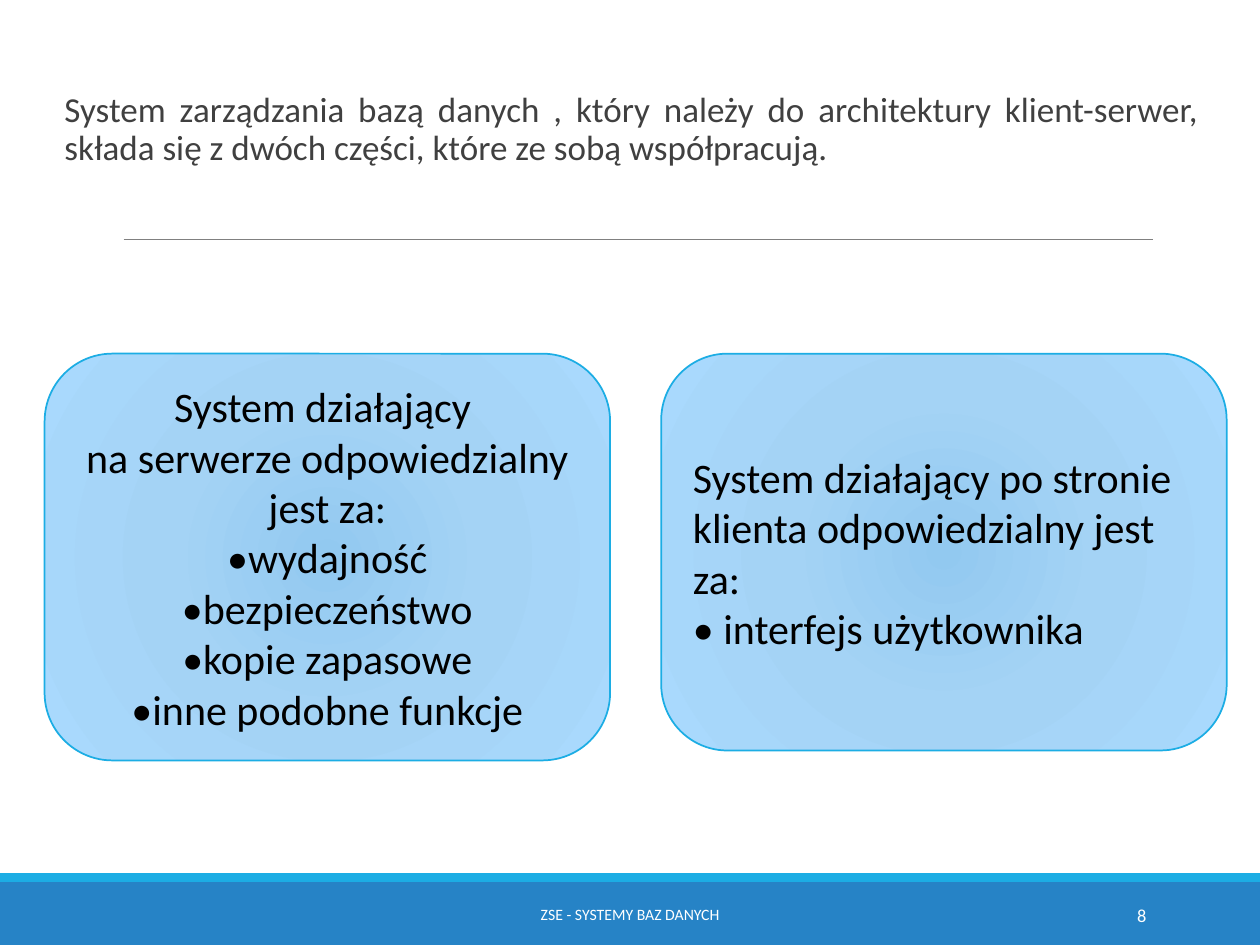
import dataclasses

import lxml.etree
import pptx
import pptx.dml.color
import pptx.enum.shapes
import pptx.enum.text
import pptx.oxml
import pptx.oxml.ns
import pptx.util

Cm = pptx.util.Cm
Pt = pptx.util.Pt
Align = pptx.enum.text.PP_ALIGN
Anchor = pptx.enum.text.MSO_ANCHOR
Kind = pptx.enum.shapes.MSO_SHAPE


@dataclasses.dataclass(frozen=True)
class Theme:
    font: str = "Calibri"
    band: str = "2683C6"
    edge: str = "1CADE4"
    rule: str = "808080"
    body: str = "404040"
    dark: str = "000000"
    light: str = "FFFFFF"
    glow: tuple = ((0, "92C9F0"), (45, "A4D3F5"), (100, "A9D9FD"))
    lead_size: float = 20
    card_size: float = 24
    foot_size: float = 9
    page_size: float = 10.5


THEME = Theme()


def tint(code):
    return pptx.dml.color.RGBColor.from_string(code)


def write(frame, lines, size, color, align, anchor=Anchor.MIDDLE):
    """Fill a text frame with one paragraph per line."""
    frame.word_wrap = True
    frame.vertical_anchor = anchor
    for i, line in enumerate(lines):
        para = frame.paragraphs[0] if i == 0 else frame.add_paragraph()
        para.alignment = align
        run = para.add_run()
        run.text = line
        run.font.name = THEME.font
        run.font.size = Pt(size)
        run.font.color.rgb = tint(color)


def label(slide, box, text, size, color, align, anchor=Anchor.MIDDLE):
    frame = slide.shapes.add_textbox(*map(Cm, box)).text_frame
    write(frame, [text], size, color, align, anchor)
    return frame


def block(slide, box, color):
    """Draw a plain rectangle without an outline."""
    shape = slide.shapes.add_shape(Kind.RECTANGLE, *map(Cm, box))
    shape.shadow.inherit = False
    shape.fill.solid()
    shape.fill.fore_color.rgb = tint(color)
    shape.line.fill.background()


def shade(shape):
    """Give a shape the round gradient of the theme."""
    stops = "".join(
        f'<a:gs pos="{pos * 1000}"><a:srgbClr val="{code}"/></a:gs>'
        for pos, code in THEME.glow)
    grad = pptx.oxml.parse_xml(
        f'<a:gradFill {pptx.oxml.ns.nsdecls("a")} rotWithShape="1">'
        f'<a:gsLst>{stops}</a:gsLst><a:path path="circle">'
        '<a:fillToRect l="100000" t="100000" r="100000" b="100000"/>'
        '</a:path></a:gradFill>')
    shape.fill.background()
    props = shape.fill._xPr
    props.replace(props.find(pptx.oxml.ns.qn("a:noFill")), grad)


def lead(slide, box):
    """Place the opening text and the rule that crosses its lower part."""
    left, top, width, height = box
    text = ("System zarządzania bazą danych , który należy do architektury "
            "klient-serwer, składa się z dwóch części, które ze sobą "
            "współpracują.")
    frame = label(slide, box, text, THEME.lead_size, THEME.body,
                  Align.JUSTIFY, Anchor.TOP)
    frame.margin_left = frame.margin_right = 0
    para = frame.paragraphs[0]
    para.line_spacing = 0.9
    para.space_before, para.space_after = Pt(12), Pt(2)

    level = Cm(top + 3.1)
    rule = slide.shapes.add_connector(
        pptx.enum.shapes.MSO_CONNECTOR.STRAIGHT,
        Cm(left + 1.19), level, Cm(left + 21.94), level)
    rule.line.color.rgb = tint(THEME.rule)
    rule.line.width = Pt(0.5)
    lxml.etree.SubElement(rule._element.spPr, pptx.oxml.ns.qn("a:effectLst"))


def card(slide, box, lines, align):
    shape = slide.shapes.add_shape(Kind.ROUNDED_RECTANGLE, *map(Cm, box))
    shape.shadow.inherit = False
    shade(shape)
    shape.line.color.rgb = tint(THEME.edge)
    shape.line.width = Pt(1)
    write(shape.text_frame, lines, THEME.card_size, THEME.dark, align)


def cards(slide, box):
    """Set the server and client cards at the two ends of the box."""
    left, top, width, height = box
    wide = 11.4
    card(slide, (left, top, wide, height), [
        "System działający ",
        "na serwerze odpowiedzialny jest za:",
        "•wydajność",
        "•bezpieczeństwo",
        "•kopie zapasowe",
        "•inne podobne funkcje",
    ], Align.CENTER)
    card(slide, (left + width - wide, top, wide, height - 0.2), [
        "System działający po stronie klienta odpowiedzialny jest za:",
        "• interfejs użytkownika",
    ], Align.LEFT)


def footer(slide, box):
    left, top, width, height = box
    strip = 0.18
    block(slide, (left, top + strip, width, height - strip), THEME.band)
    block(slide, (left, top, width, strip), THEME.edge)
    row, tall = top + 0.33, 1.02
    label(slide, (left + 7.67, row, 10.06, tall), "ZSE - SYSTEMY BAZ DANYCH",
          THEME.foot_size, THEME.light, Align.CENTER)
    label(slide, (left + 20.62, row, 2.74, tall), "8",
          THEME.page_size, THEME.light, Align.RIGHT)


def main():
    deck = pptx.Presentation()
    deck.slide_width, deck.slide_height = Cm(25.4), Cm(19.05)
    slide = deck.slides.add_slide(deck.slide_layouts[6])
    footer(slide, (0, 17.6, 25.4, 1.45))
    lead(slide, (1.3, 1.73, 22.86, 3.68))
    cards(slide, (0.9, 7.13, 23.83, 8.2))
    deck.save("out.pptx")


if __name__ == "__main__":
    main()
